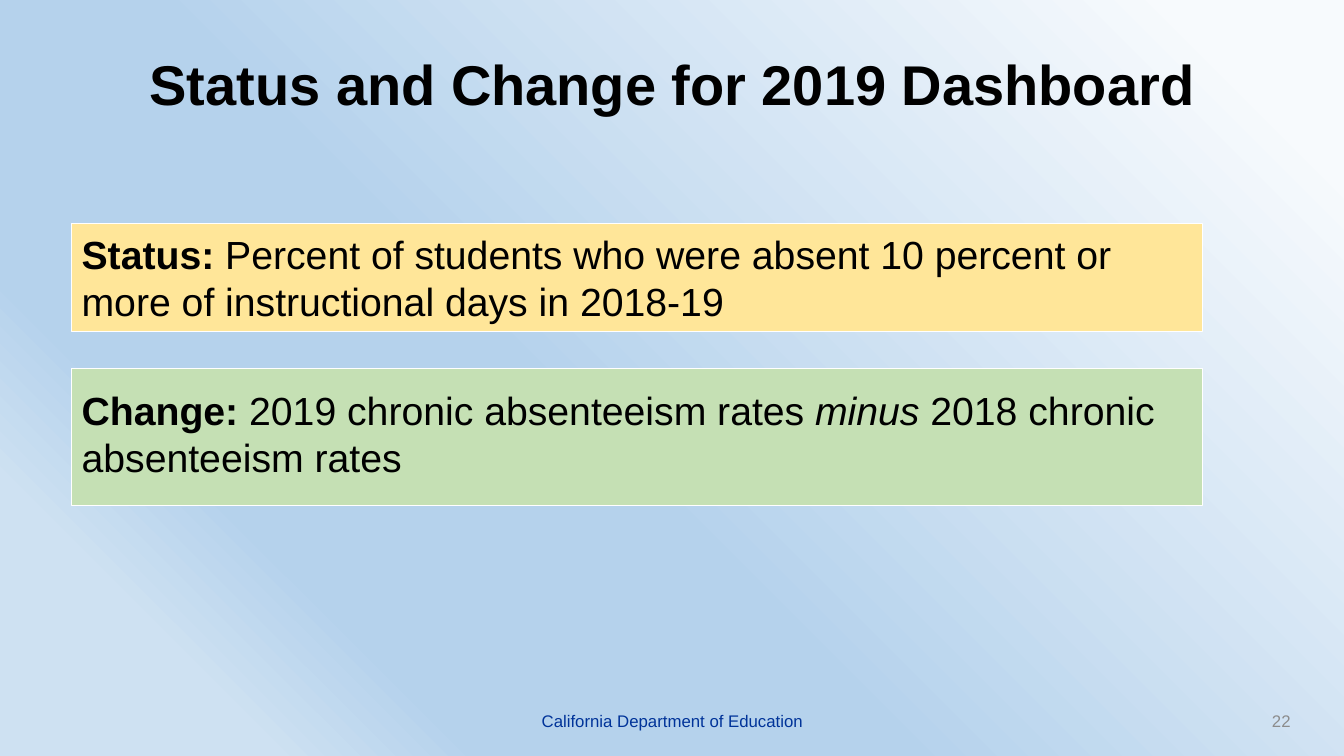
from lxml import etree
from pptx import Presentation
from pptx import util as u
from pptx.dml.color import RGBColor
from pptx.enum import text
from pptx.oxml import ns

SLIDE_WIDTH, SLIDE_HEIGHT = 13.33, 7.5
BACKGROUND_STOPS = [(8, "F7FAFD"), (57, "B5D2EC"), (77, "B5D2EC"), (87, "CEE1F2")]


def color(hex_value):
    return RGBColor.from_string(hex_value)


class SlideBuilder:
    """Holds the style and the current slide."""

    font_name = "Arial"
    ink = "000000"

    def __init__(self, slide):
        self.slide = slide

    def background(self, stops, angle):
        fill = self.slide.background.fill
        fill.gradient()
        fill.gradient_angle = angle
        stop_list = fill.gradient_stops[0]._gs.getparent()
        for stop in list(stop_list):
            stop_list.remove(stop)
        for position, hex_value in stops:
            stop = etree.SubElement(stop_list, ns.qn("a:gs"), pos=str(position * 1000))
            etree.SubElement(stop, ns.qn("a:srgbClr"), val=hex_value)

    def place(self, shape, left, top, width, height):
        shape.left, shape.top = u.Inches(left), u.Inches(top)
        shape.width, shape.height = u.Inches(width), u.Inches(height)
        frame = shape.text_frame
        frame.word_wrap = True
        frame.auto_size = text.MSO_AUTO_SIZE.NONE
        frame.vertical_anchor = text.MSO_ANCHOR.MIDDLE
        return frame

    def style(self, run, size, hex_value, bold=False, italic=False):
        font = run.font
        font.name, font.size = self.font_name, u.Pt(size)
        font.bold, font.italic = bold, italic
        font.color.rgb = color(hex_value)

    def title(self, wording, box):
        frame = self.place(self.slide.shapes.title, *box)
        frame.text = wording
        paragraph = frame.paragraphs[0]
        paragraph.alignment = text.PP_ALIGN.CENTER
        paragraph.line_spacing = 0.9
        self.style(paragraph.runs[0], 40, self.ink, bold=True)

    def definition(self, index, box, fill, pieces, bottom_inset):
        """Fill a body placeholder with (wording, bold, italic) pieces."""
        shape = self.slide.placeholders[index]
        frame = self.place(shape, *box)
        frame.margin_bottom = u.Inches(bottom_inset)
        shape.fill.solid()
        shape.fill.fore_color.rgb = color(fill)
        shape.line.color.rgb = color("FFFFFF")
        shape.line.width = u.Pt(0.75)
        paragraph = frame.paragraphs[0]
        paragraph.alignment = text.PP_ALIGN.LEFT
        paragraph.space_before = u.Pt(0)
        properties = paragraph._p.get_or_add_pPr()
        properties.set("marL", "0")
        properties.set("indent", "0")
        etree.SubElement(properties, ns.qn("a:buNone"))
        for wording, bold, italic in pieces:
            run = paragraph.add_run()
            run.text = wording
            self.style(run, 28, self.ink, bold, italic)

    def footer(self, wording, left, width, alignment, hex_value):
        box = (left, 6.95, width, 0.4)
        shape = self.slide.shapes.add_textbox(*map(u.Inches, box))
        frame = self.place(shape, *box)
        frame.text = wording
        paragraph = frame.paragraphs[0]
        paragraph.alignment = alignment
        self.style(paragraph.runs[0], 12, hex_value)


def main():
    presentation = Presentation()
    presentation.slide_width = u.Inches(SLIDE_WIDTH)
    presentation.slide_height = u.Inches(SLIDE_HEIGHT)
    two_content = presentation.slide_layouts[3]
    builder = SlideBuilder(presentation.slides.add_slide(two_content))

    builder.background(BACKGROUND_STOPS, angle=225)
    builder.title("Status and Change for 2019 Dashboard", (0, 0, SLIDE_WIDTH, 1.73))
    builder.definition(1, (0.71, 2.22, 11.22, 1.07), "FFE699", [
        ("Status: ", True, False),
        ("Percent of students who were absent 10 percent or more of "
         "instructional days in 2018-19", False, False),
    ], bottom_inset=0.05)
    builder.definition(2, (0.71, 3.66, 11.22, 1.36), "C5E0B4", [
        ("Change: ", True, False),
        ("2019 chronic absenteeism rates ", False, False),
        ("minus ", False, True),
        ("2018 chronic absenteeism rates", False, False),
    ], bottom_inset=0.13)
    builder.footer("California Department of Education", 4.42, 4.5,
                   text.PP_ALIGN.CENTER, "003399")
    builder.footer("22", 9.9, 3, text.PP_ALIGN.RIGHT, "8C8C8C")

    presentation.save("out.pptx")


if __name__ == "__main__":
    main()
